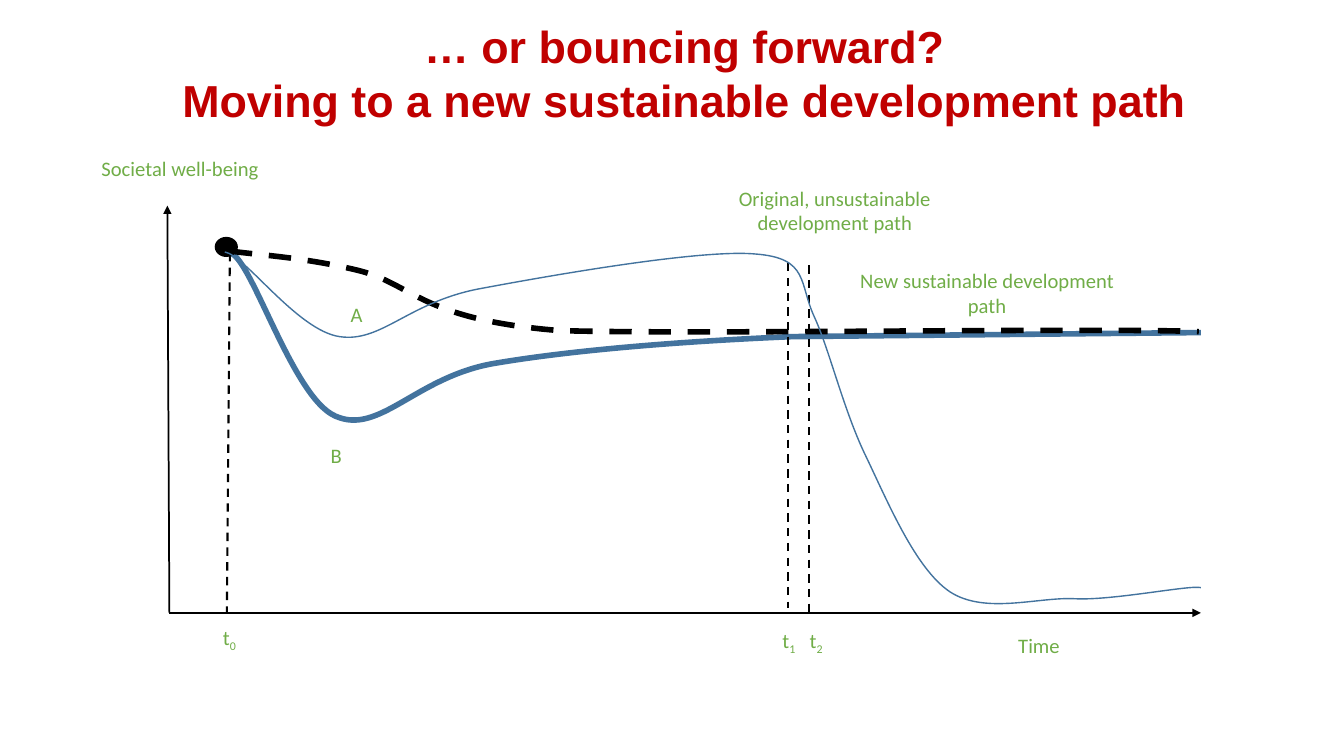
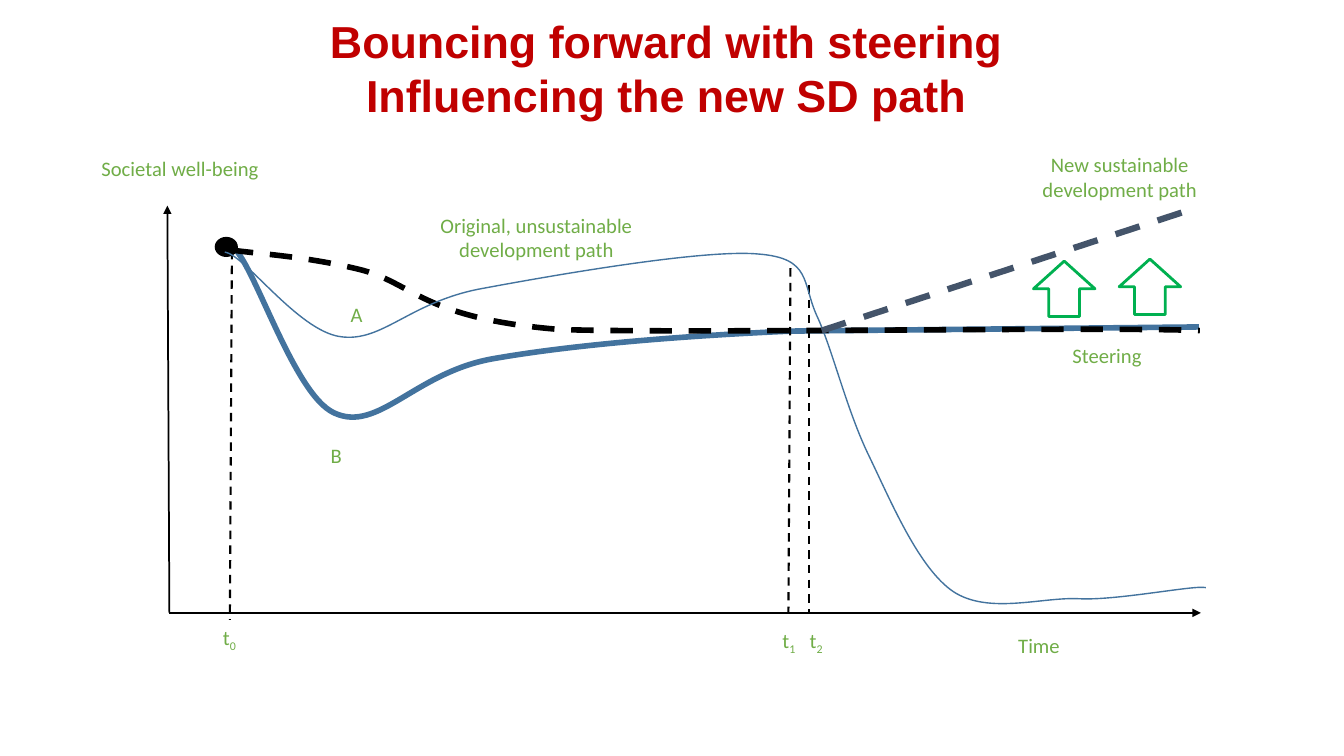
from lxml import etree
from pptx import Presentation
from pptx.dml.color import RGBColor
from pptx.enum.dml import MSO_LINE
from pptx.enum.shapes import MSO_CONNECTOR, MSO_SHAPE
from pptx.enum.text import MSO_ANCHOR, MSO_AUTO_SIZE, PP_ALIGN
from pptx.oxml.ns import qn
from pptx.util import Pt

PX = 9144
DASH = MSO_LINE.DASH
STRAIGHT = MSO_CONNECTOR.STRAIGHT
OVAL = MSO_SHAPE.OVAL
ARROW = MSO_SHAPE.UP_ARROW
LEFT = PP_ALIGN.LEFT
CENTER = PP_ALIGN.CENTER
MIDDLE = MSO_ANCHOR.MIDDLE
FIXED = MSO_AUTO_SIZE.NONE
GROW = MSO_AUTO_SIZE.SHAPE_TO_FIT_TEXT

color = RGBColor.from_string
RED, GREEN, BLUE = "C00000", "70AD47", "43739E"
BLACK, WHITE, SLATE, LEAF = "000000", "FFFFFF", "44546A", "00B050"

BOLD = (963, 166), [
    (0, 0), (21, 3), (62, 144), (105, 162), (148, 181), (184, 124), (260, 110),
    (335, 97), (441, 88), (558, 83), (963, 79),
]
NEW = (961, 80), [
    (0, 0), (27, 4), (72, 6), (126, 19), (181, 32), (188, 68), (327, 79),
    (459, 83), (863, 76), (961, 80),
]
OLD = (968, 349), [
    (0, 0), (20, 3), (72, 78), (114, 84), (155, 90), (181, 51), (250, 37),
    (319, 24), (471, -3), (526, 2), (580, 6), (569, 31), (585, 65),
    (600, 98), (614, 158), (636, 203), (658, 249), (685, 314), (719, 337),
    (754, 360), (807, 342), (843, 344), (880, 346), (958, 330), (968, 333),
]
AXES = [(168, 608, 166, 204), (168, 608, 1191, 608)]
LABELS = [
    (["Societal well-being"], CENTER, 88, 150, 181, 35),
    (["Time"], CENTER, 940, 623, 181, 35),
    (["t", "0"], CENTER, 137, 615, 181, 35),
    (["A"], LEFT, 338, 295, 27, 35),
    (["B"], LEFT, 318, 434, 27, 35),
    (["t", "1", "\tt", "2"], LEFT, 707, 618, 181, 35),
]
OLD_TEXT = ["Original, unsustainable development path"]
NEW_TEXT = ["New sustainable development path"]

SLIDES = [
    {
        "title": "… or bouncing forward?\nMoving to a new sustainable development path",
        "box": (49, 20, 1260, 104),
        "start": (228, 251, 225, 608),
        "bold": (228, 251, 963, 166),
        "new": (228, 249, 961, 80),
        "old": (223, 250, 968, 349),
        "times": [(782, 261, 782, 603), (802, 263, 802, 608)],
        "labels": [
            (OLD_TEXT, CENTER, 688, 179, 280, 59),
            (NEW_TEXT, CENTER, 839, 261, 280, 59),
        ],
        "rise": [],
        "arrows": [],
    },
    {
        "title": "Bouncing forward with steering\nInfluencing the new SD path",
        "box": (26, 15, 1270, 104),
        "start": (230, 249, 228, 615),
        "bold": (227, 243, 962, 171),
        "new": (229, 248, 961, 80),
        "old": (223, 250, 973, 349),
        "times": [(784, 266, 782, 607), (802, 283, 802, 608)],
        "labels": [
            (OLD_TEXT, CENTER, 392, 206, 280, 59),
            (NEW_TEXT, CENTER, 977, 146, 267, 59),
            (["Steering"], CENTER, 958, 335, 280, 35),
        ],
        "rise": [(815, 328, 1187, 206)],
        "arrows": [(1025, 259, 61, 55), (1110, 257, 61, 55)],
    },
]


def link(slide, ends, hue, width, dash=None):
    line = slide.shapes.add_connector(STRAIGHT, *(n * PX for n in ends))
    line.line.color.rgb = color(hue)
    line.line.width = Pt(width)
    line.line.dash_style = dash
    etree.SubElement(line.element.spPr, qn("a:effectLst"))
    return line


def curve(slide, trace, place, hue, width, dash=None):
    size, knots = trace
    pen = slide.shapes.build_freeform(*knots[0], scale=PX)
    pen.add_line_segments(knots[-1:], close=False)
    shape = pen.convert_to_shape()
    shape.left, shape.top, shape.width, shape.height = (n * PX for n in place)
    route = next(shape.element.iter(qn("a:path")))
    route.set("w", str(size[0]))
    route.set("h", str(size[1]))
    route.remove(route[-1])
    for i in range(1, len(knots), 3):
        group = knots[i:i + 3]
        tag = "a:cubicBezTo" if len(group) == 3 else "a:lnTo"
        part = etree.SubElement(route, qn(tag))
        for x, y in group:
            etree.SubElement(part, qn("a:pt"), x=str(x), y=str(y))
    shape.shadow.inherit = False
    shape.fill.background()
    shape.line.color.rgb = color(hue)
    shape.line.width = Pt(width)
    shape.line.dash_style = dash


deck = Presentation()
deck.slide_width, deck.slide_height = 1333 * PX, 750 * PX

for page in SLIDES:
    slide = deck.slides.add_slide(deck.slide_layouts[5])
    title = slide.shapes.title
    title.left, title.top, title.width, title.height = (n * PX for n in page["box"])
    form = etree.SubElement(title.element.spPr, qn("a:prstGeom"), prst="roundRect")
    etree.SubElement(form, qn("a:avLst"))
    title.fill.solid()
    title.fill.fore_color.rgb = color(WHITE)
    frame = title.text_frame
    frame.text = page["title"]
    frame.auto_size = FIXED
    frame.vertical_anchor = MIDDLE
    for para in frame.paragraphs:
        para.alignment = CENTER
        font = para.runs[0].font
        font.name, font.size, font.bold = "Arial", Pt(32), True
        font.color.rgb = color(RED)

    for ends in AXES:
        axis = link(slide, ends, BLACK, 1.25)
        tail = etree.Element(qn("a:tailEnd"), type="triangle")
        axis.element.spPr.find(qn("a:ln")).append(tail)
    link(slide, page["start"], BLACK, 1.5, DASH)

    curve(slide, BOLD, page["bold"], BLUE, 4)
    curve(slide, NEW, page["new"], BLACK, 4, DASH)
    dot = slide.shapes.add_shape(OVAL, *(n * PX for n in (213, 235, 23, 20)))
    dot.shadow.inherit = False
    dot.fill.solid()
    dot.fill.fore_color.rgb = color(BLACK)
    dot.line.fill.background()
    for ends in page["times"]:
        link(slide, ends, BLACK, 1.5, DASH)
    curve(slide, OLD, page["old"], BLUE, 1)
    for ends in page["rise"]:
        link(slide, ends, SLATE, 4.5, DASH)

    for place in page["arrows"]:
        arrow = slide.shapes.add_shape(ARROW, *(n * PX for n in place))
        arrow.shadow.inherit = False
        arrow.fill.background()
        arrow.line.color.rgb = color(LEAF)
        arrow.line.width = Pt(2)

    for texts, align, *place in LABELS + page["labels"]:
        frame = slide.shapes.add_textbox(*(n * PX for n in place)).text_frame
        frame.word_wrap = True
        frame.auto_size = GROW
        para = frame.paragraphs[0]
        para.alignment = align
        if len(texts) > 2:
            frame.margin_left = 69 * PX
            tabs = etree.SubElement(para._p.get_or_add_pPr(), qn("a:tabLst"))
            etree.SubElement(tabs, qn("a:tab"), pos=str(27 * PX), algn="l")
        for i, text in enumerate(texts):
            run = para.add_run()
            run.text = text
            run.font.name, run.font.size = "Calibri", Pt(14.7)
            run.font.color.rgb = color(GREEN)
            if i % 2:
                run._r.get_or_add_rPr().set("baseline", "-25000")

deck.save("out.pptx")
